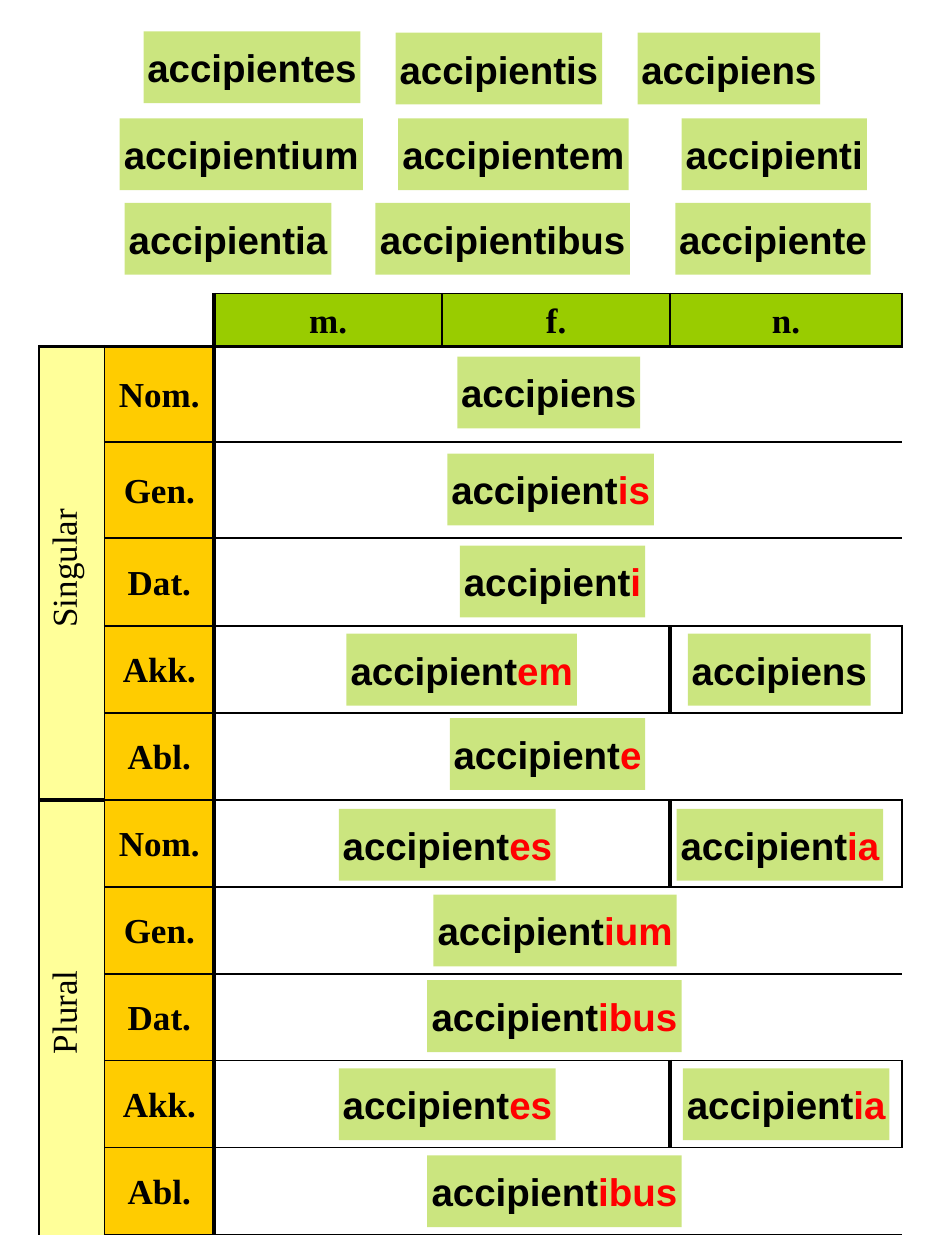
from lxml.etree import SubElement
from pptx import Presentation
from pptx.dml.color import RGBColor
from pptx.enum.shapes import MSO_SHAPE
from pptx.enum.text import MSO_ANCHOR, MSO_AUTO_SIZE, PP_ALIGN
from pptx.oxml.ns import qn
from pptx.util import Inches, Pt

STEM = "accipient"
NO_STYLE = "{2D5ABB26-0587-4C30-8999-92F81FD0307C}"
GREEN, YELLOW, ORANGE = "99CC00", "FFFF99", "FFCC00"
BLACK, RED = "000000", "FF0000"
THIN, THICK = 1, 2.25

# Label widths by word ending; "" stands for the short form accipiens
WIDTHS = {"": 1.45, "i": 1.47, "e": 1.55, "is": 1.64, "ia": 1.64,
          "es": 1.72, "em": 1.83, "ium": 1.93, "ibus": 2.02}


def color(hex_string):
    return RGBColor.from_string(hex_string)


class ParadigmSlide:
    def __init__(self, presentation):
        self.slide = presentation.slides.add_slide(presentation.slide_layouts[6])

    def style_font(self, font, name, size, bold=True):
        font.name, font.size, font.bold = name, Pt(size), bold
        font.color.rgb = color(BLACK)

    def word_label(self, left, top, ending, mark_ending=False):
        shape = self.slide.shapes.add_shape(
            MSO_SHAPE.RECTANGLE, Inches(left), Inches(top),
            Inches(WIDTHS[ending]), Inches(0.57))
        shape.shadow.inherit = False
        shape.line.fill.background()
        shape.fill.solid()
        shape.fill.fore_color.rgb = color(GREEN)
        fill_color = shape.fill._xPr.find(qn("a:solidFill"))[0]
        SubElement(fill_color, qn("a:alpha"), val="50000")

        frame = shape.text_frame
        frame.word_wrap = False
        frame.auto_size = MSO_AUTO_SIZE.SHAPE_TO_FIT_TEXT
        frame.margin_left = frame.margin_right = Inches(0.02)
        frame.margin_top = frame.margin_bottom = Inches(0.1)
        paragraph = frame.paragraphs[0]
        paragraph.alignment = PP_ALIGN.CENTER
        self.style_font(paragraph.font, "Arial", 22)
        if mark_ending and ending:
            paragraph.add_run().text = STEM
            run = paragraph.add_run()
            run.text = ending
            run.font.color.rgb = color(RED)
        else:
            paragraph.add_run().text = STEM + ending if ending else "accipiens"

    def table(self, left, top, columns, rows):
        frame = self.slide.shapes.add_table(
            len(rows), len(columns), Inches(left), Inches(top),
            Inches(sum(columns)), Inches(sum(rows)))
        table = frame.table
        table.first_row = table.horz_banding = False
        table._tbl.tblPr.find(qn("a:tableStyleId")).text = NO_STYLE
        for column, width in zip(table.columns, columns):
            column.width = Inches(width)
        for row, height in zip(table.rows, rows):
            row.height = Inches(height)
        return table

    def border(self, cell, edge, width):
        line = SubElement(cell._tc.get_or_add_tcPr(), qn(f"a:{edge}"),
                          w=str(Pt(width)))
        fill = SubElement(line, qn("a:solidFill"))
        SubElement(fill, qn("a:srgbClr"), val=BLACK)

    def block(self, table, row, column, height=1, width=1, text="", fill=None,
              vertical=False, outer="LRTB"):
        """One cell or merged range with a border round its outside."""
        bottom, right = row + height - 1, column + width - 1
        for r in range(row, bottom + 1):
            for c in range(column, right + 1):
                edges = {"L": (c == column, c == 2), "R": (c == right, c == 1),
                         "T": (r == row, r == 1), "B": (r == bottom, r == 0)}
                for side, (on_edge, is_thick) in edges.items():
                    if on_edge and side in outer:
                        self.border(table.cell(r, c), f"ln{side}",
                                    THICK if is_thick else THIN)
        cell = table.cell(row, column)
        if height * width > 1:
            cell.merge(table.cell(bottom, right))
        if fill:
            cell.fill.solid()
            cell.fill.fore_color.rgb = color(fill)
        else:
            cell.fill.background()
        if text:
            self.cell_text(cell, text, vertical)

    def cell_text(self, cell, text, vertical):
        cell.vertical_anchor = MSO_ANCHOR.MIDDLE
        cell.margin_left = cell.margin_right = Inches(0.06)
        cell.margin_top = cell.margin_bottom = Inches(0.03)
        paragraph = cell.text_frame.paragraphs[0]
        paragraph.add_run().text = text
        paragraph.alignment = PP_ALIGN.CENTER
        paragraph.line_spacing = 1.07
        self.style_font(paragraph.font, "Times New Roman", 20, not vertical)
        if vertical:
            cell._tc.tcPr.set("vert", "vert270")
            paragraph._p.get_or_add_pPr().set("marL", str(Inches(0.08)))


def main():
    presentation = Presentation()
    presentation.slide_width, presentation.slide_height = Inches(7.5), Inches(10)
    page = ParadigmSlide(presentation)

    # Word bank
    for left, top, ending in [
            (1.14, 0.25, "es"), (3.14, 0.26, "is"), (5.06, 0.26, ""),
            (0.95, 0.94, "ium"), (3.16, 0.94, "em"), (5.41, 0.94, "i"),
            (0.99, 1.61, "ia"), (2.98, 1.61, "ibus"), (5.36, 1.61, "e")]:
        page.word_label(left, top, ending)

    # Declension table: header row, then five cases for each number
    table = page.table(0.31, 2.33, [0.52, 0.87, 1.81, 1.81, 1.84],
                       [0.42, 0.76, 0.76, 0.7] + [0.69] * 7)
    page.block(table, 0, 0, width=2, outer="RB")
    for column, gender in enumerate(["m.", "f.", "n."], start=2):
        page.block(table, 0, column, text=gender, fill=GREEN)
    cases = ["Nom.", "Gen.", "Dat.", "Akk.", "Abl."]
    separate_neuter = {4, 6, 9}
    for first_row, number in [(1, "Singular"), (6, "Plural")]:
        page.block(table, first_row, 0, height=5, text=number, fill=YELLOW,
                   vertical=True)
        for row, case in enumerate(cases, start=first_row):
            page.block(table, row, 1, text=case, fill=ORANGE)
            if row in separate_neuter:
                page.block(table, row, 2, width=2)
                page.block(table, row, 4)
            else:
                page.block(table, row, 2, width=3)

    # Solved forms, with the endings in red
    for left, top, ending in [
            (3.63, 2.83, ""), (3.55, 3.6, "is"), (3.65, 4.33, "i"),
            (2.75, 5.03, "em"), (5.46, 5.03, ""), (3.57, 5.7, "e"),
            (2.69, 6.42, "es"), (5.37, 6.42, "ia"), (3.44, 7.1, "ium"),
            (3.39, 7.78, "ibus"), (2.69, 8.48, "es"), (5.42, 8.48, "ia"),
            (3.39, 9.17, "ibus")]:
        page.word_label(left, top, ending, mark_ending=True)

    presentation.save("out.pptx")


if __name__ == "__main__":
    main()
